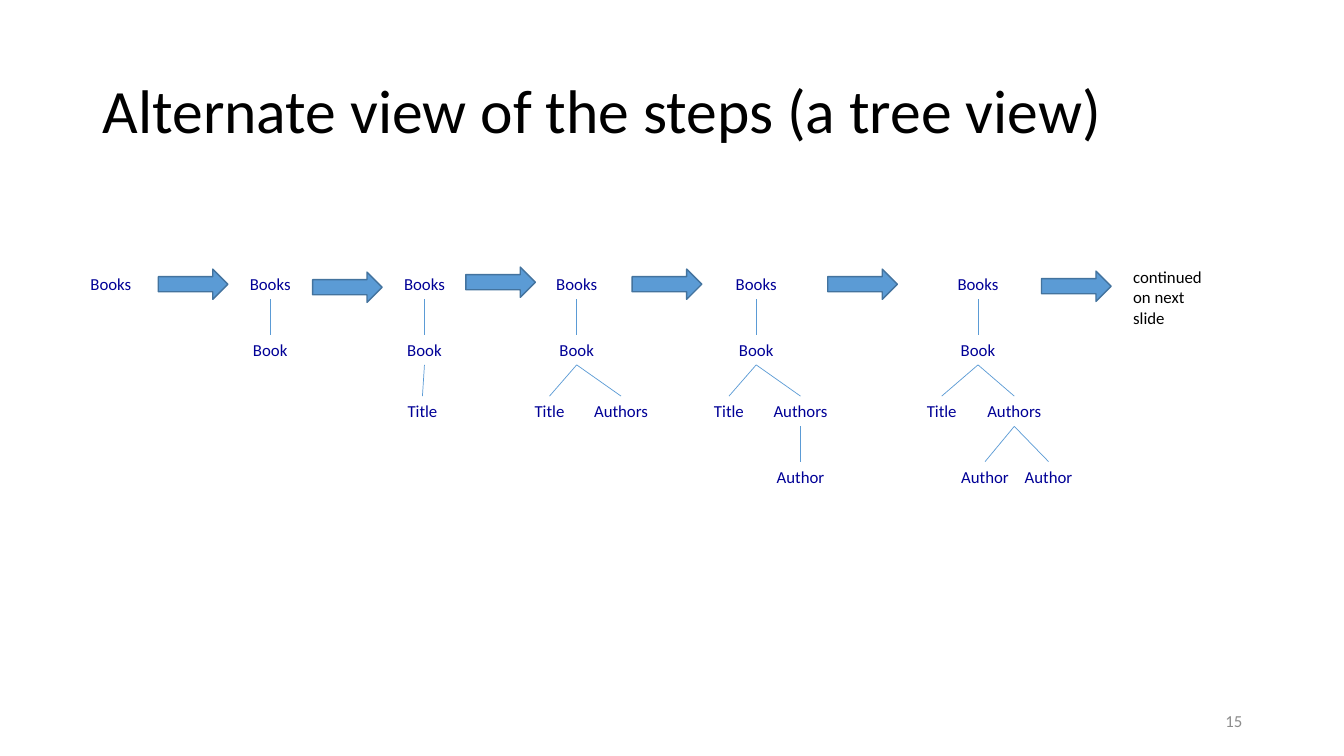
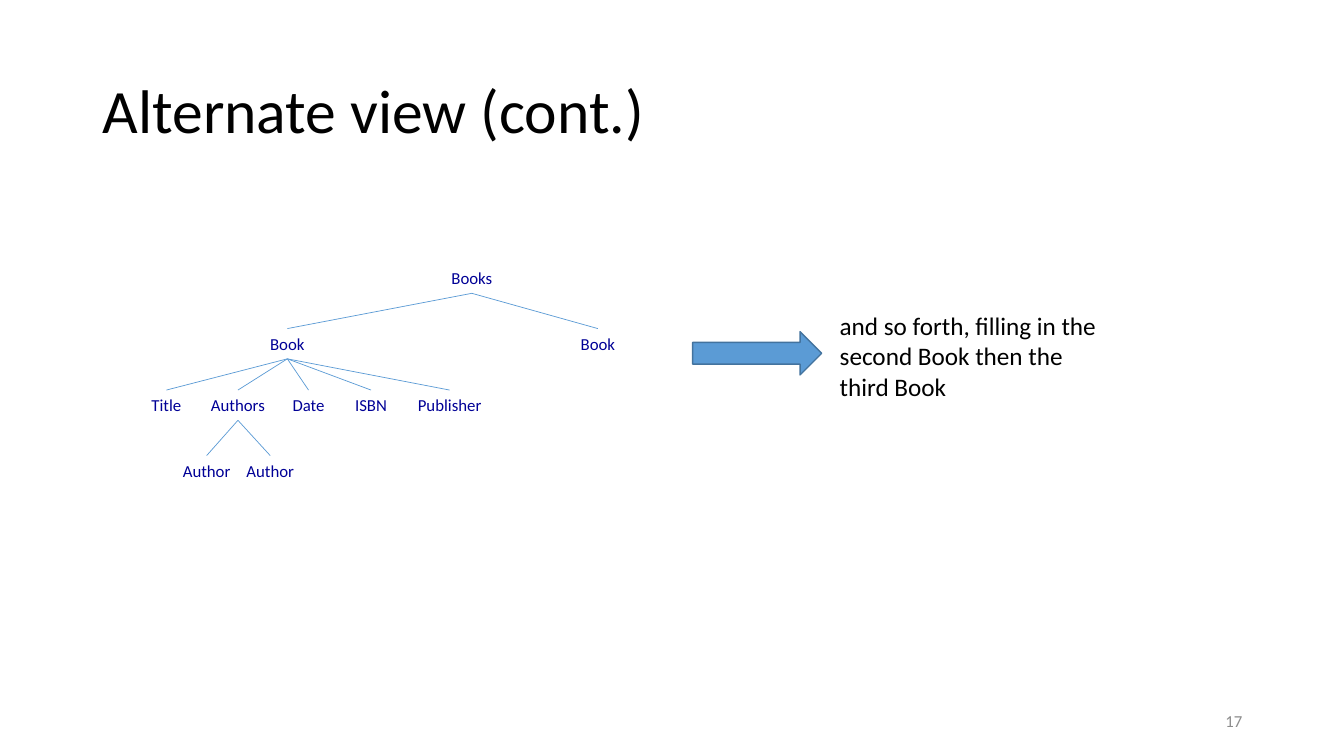
"""Build two slides that show an XML document growing as a tree, step by step."""
from lxml import etree
from pptx import Presentation
from pptx import util as u
from pptx.dml.color import RGBColor
from pptx.enum import shapes, text
from pptx.oxml.ns import qn

FONT = "Calibri"
BLACK, NAVY, GREY = "000000", "000096", "8C8C8C"
BLUE, DARK_BLUE = "5B9BD5", "43739E"
LABEL_HEIGHT = 0.3
LEVEL_DROPS = [0, 0.65, 1.26, 1.91]
LABEL_WIDTHS = {"Books": 0.61, "Book": 0.55, "Title": 0.5, "Authors": 0.74,
                "Author": 0.68, "Date": 0.52, "ISBN": 0.52, "Publisher": 0.84}


def color(hex_value):
    return RGBColor.from_string(hex_value)


def write_text(slide, box, lines, size, hex_value, align="LEFT", anchor="TOP",
               wrap=True, spacing=1.0):
    frame = slide.shapes.add_textbox(*map(u.Inches, box)).text_frame
    frame.word_wrap = wrap
    frame.vertical_anchor = text.MSO_ANCHOR[anchor]
    for index, line in enumerate(lines):
        paragraph = frame.add_paragraph() if index else frame.paragraphs[0]
        paragraph.alignment = text.PP_ALIGN[align]
        paragraph.line_spacing = spacing
        run = paragraph.add_run()
        run.text = line
        run.font.name = FONT
        run.font.size = u.Pt(size)
        run.font.color.rgb = color(hex_value)


# Each node is (label, centre x, level, index of its parent in the same tree).
growth_trees = [
    [("Books", 1.1, 0, None)],
    [("Books", 2.68, 0, None), ("Book", 2.68, 1, 0)],
    [("Books", 4.21, 0, None), ("Book", 4.21, 1, 0), ("Title", 4.19, 2, 1)],
    [("Books", 5.72, 0, None), ("Book", 5.72, 1, 0), ("Title", 5.45, 2, 1),
     ("Authors", 6.16, 2, 1)],
    [("Books", 7.5, 0, None), ("Book", 7.5, 1, 0), ("Title", 7.23, 2, 1),
     ("Authors", 7.94, 2, 1), ("Author", 7.94, 3, 3)],
    [("Books", 9.7, 0, None), ("Book", 9.7, 1, 0), ("Title", 9.34, 2, 1),
     ("Authors", 10.06, 2, 1), ("Author", 9.77, 3, 3), ("Author", 10.4, 3, 3)],
]
full_tree = [
    ("Books", 4.68, 0, None), ("Book", 2.85, 1, 0), ("Book", 5.93, 1, 0),
    ("Title", 1.65, 2, 1), ("Authors", 2.36, 2, 1), ("Date", 3.06, 2, 1),
    ("ISBN", 3.68, 2, 1), ("Publisher", 4.46, 2, 1),
    ("Author", 2.05, 3, 4), ("Author", 2.68, 3, 4),
]
growth_arrows = [(x, y, 0.69, 0.3) for x, y in [
    (1.57, 2.67), (3.1, 2.7), (4.62, 2.65), (6.27, 2.67), (8.21, 2.67), (10.33, 2.69)]]

pages = [
    {"title": "Alternate view of the steps (a tree view)", "number": "15",
     "top": 2.67, "trees": growth_trees, "arrows": growth_arrows,
     "note": ["continued", "on next", "slide"],
     "note_box": (11.14, 2.6, 0.89, 0.71), "note_size": 12},
    {"title": "Alternate view (cont.)", "number": "17",
     "top": 2.61, "trees": [full_tree], "arrows": [(6.87, 3.29, 1.28, 0.43)],
     "note": ["and so forth, filling in the second Book then the third Book"],
     "note_box": (8.23, 3.03, 2.87, 1.01), "note_size": 18},
]

deck = Presentation()
deck.slide_width, deck.slide_height = u.Inches(13.33), u.Inches(7.5)

for page in pages:
    slide = deck.slides.add_slide(deck.slide_layouts[6])
    write_text(slide, (0.92, 0.4, 11.5, 1.45), [page["title"]], 44, BLACK,
               anchor="MIDDLE", spacing=0.9)

    for tree in page["trees"]:
        for label, center, level, parent in tree:
            top = page["top"] + LEVEL_DROPS[level]
            width = LABEL_WIDTHS[label]
            write_text(slide, (center - width / 2, top, width, LABEL_HEIGHT), [label],
                       12, NAVY, align="CENTER", wrap=False)
            if parent is None:
                continue
            parent_center, parent_level = tree[parent][1:3]
            parent_bottom = page["top"] + LEVEL_DROPS[parent_level] + LABEL_HEIGHT
            branch = slide.shapes.add_connector(
                shapes.MSO_CONNECTOR.STRAIGHT, u.Inches(parent_center),
                u.Inches(parent_bottom), u.Inches(center), u.Inches(top))
            branch.line.color.rgb = color(BLUE)
            branch.line.width = u.Pt(0.5)
            etree.SubElement(branch._element.spPr, qn("a:effectLst"))

    for arrow_box in page["arrows"]:
        arrow = slide.shapes.add_shape(
            shapes.MSO_SHAPE.RIGHT_ARROW, *map(u.Inches, arrow_box))
        arrow.shadow.inherit = False
        arrow.fill.solid()
        arrow.fill.fore_color.rgb = color(BLUE)
        arrow.line.color.rgb = color(DARK_BLUE)
        arrow.line.width = u.Pt(1)

    write_text(slide, page["note_box"], page["note"], page["note_size"], BLACK,
               wrap=len(page["note"]) == 1)
    write_text(slide, (9.42, 6.95, 3, 0.4), [page["number"]], 12, GREY,
               align="RIGHT", anchor="MIDDLE")

deck.save("out.pptx")
